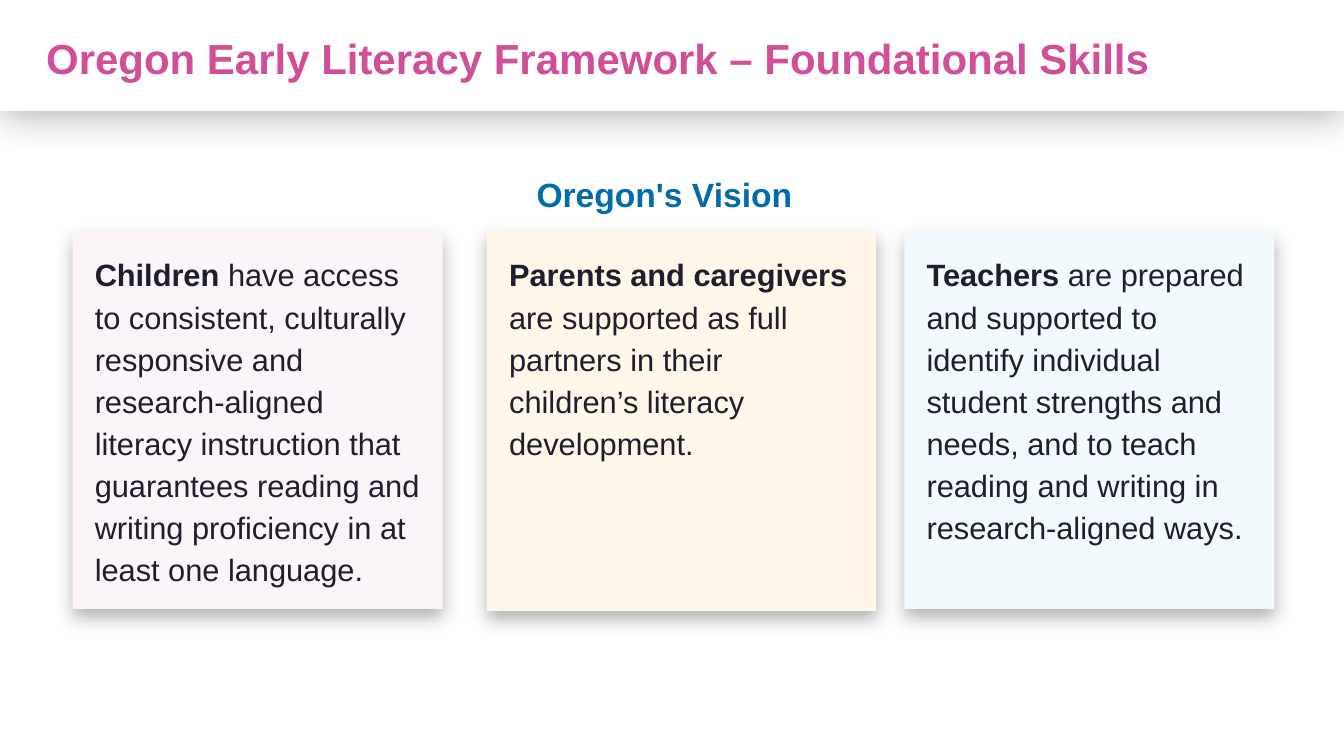
import pptx
import pptx.dml.color
import pptx.enum.shapes
import pptx.enum.text
import pptx.util
from lxml import etree
from pptx.oxml.ns import qn
from pptx.util import Inches, Pt

COLORS = {
    "white": "FFFFFF",
    "title": "D14F97",
    "vision": "026CAA",
    "text": "1E1E2D",
    "shadow": "000000",
    "children": "FBF4F8",
    "parents": "FEF7EA",
    "teachers": "F3FAFE",
}
ALIGN = pptx.enum.text.PP_ALIGN
ANCHOR = pptx.enum.text.MSO_ANCHOR
BODY_FORMAT = {"line_spacing": 1.14, "space_after": Pt(6)}
CARD_TOP = 2.29
CARDS = [
    (0.72, 3.67, 3.75, "children", "Children",
     " have access to consistent, culturally responsive and research-aligned "
     "literacy instruction that guarantees reading and writing proficiency in "
     "at least one language."),
    (4.83, 3.86, 3.77, "parents", "Parents and caregivers ",
     "are supported as full partners in their children’s literacy development."),
    (8.97, 3.67, 3.75, "teachers", "Teachers",
     " are prepared and supported to identify individual student strengths and "
     "needs, and to teach reading and writing in research-aligned ways."),
]


def rgb(name):
    """Return the named colour."""
    return pptx.dml.color.RGBColor.from_string(COLORS[name])


def apply_format(target, values):
    """Set every attribute in values on target."""
    for name, value in values.items():
        setattr(target, name, value)


def add_shadow(shape, blur, distance):
    """Give a shape a soft downward shadow."""
    effects = etree.SubElement(shape._element.spPr, qn("a:effectLst"))
    shadow = etree.SubElement(
        effects, qn("a:outerShdw"), blurRad=str(Pt(blur)), dist=str(Pt(distance)),
        dir="5400000", algn="t", rotWithShape="0")
    color = etree.SubElement(shadow, qn("a:srgbClr"), val=COLORS["shadow"])
    etree.SubElement(color, qn("a:alpha"), val="30000")


def add_panel(slide, place, fill, blur, distance):
    """Add a filled rectangle with a shadow and no outline."""
    panel = slide.shapes.add_shape(
        pptx.enum.shapes.MSO_SHAPE.RECTANGLE, *map(Inches, place))
    panel.fill.solid()
    panel.fill.fore_color.rgb = rgb(fill)
    panel.line.fill.background()
    add_shadow(panel, blur, distance)
    return panel


def write_text(box, spans, size, color, frame_format, para_format):
    """Write one paragraph of (text, bold) spans into a box."""
    frame = box.text_frame
    apply_format(frame, {"word_wrap": True, **frame_format})
    para = frame.paragraphs[0]
    apply_format(para, para_format)
    for text, bold in spans:
        span = para.add_run()
        span.text = text
        apply_format(span.font, {"name": "Arial", "size": Pt(size), "bold": bold})
        span.font.color.rgb = rgb(color)


def padding(left):
    """Return a top-anchored frame format with wide margins."""
    wide = Inches(0.2)
    return {"vertical_anchor": ANCHOR.TOP, "margin_left": Inches(left),
            "margin_right": wide, "margin_top": wide, "margin_bottom": wide}


def add_heading(slide, place, text, size, color, frame_format, para_format):
    """Add a bold one-line text box."""
    box = slide.shapes.add_textbox(*map(Inches, place))
    write_text(box, [(text, True)], size, color, frame_format, para_format)


def add_card(slide, left, width, height, fill, lead, rest):
    """Add a tinted card that opens with a bold lead."""
    card = add_panel(slide, (left, CARD_TOP, width, height), fill, 13, 6)
    write_text(card, [(lead, True), (rest, False)], 22, "text",
               padding(0.22), {"alignment": ALIGN.LEFT, **BODY_FORMAT})


def main():
    """Build the slide and save it."""
    deck = pptx.Presentation()
    deck.slide_width, deck.slide_height = Inches(13.33), Inches(7.5)
    slide = deck.slides.add_slide(deck.slide_layouts[6])
    add_panel(slide, (0, 0, 13.33, 1.1), "white", 28, 3)
    add_heading(slide, (0.36, 0.27, 12.67, 0.61),
                "Oregon Early Literacy Framework – Foundational Skills", 30, "title",
                {"vertical_anchor": ANCHOR.MIDDLE}, {"alignment": ALIGN.LEFT})
    add_heading(slide, (0.36, 1.47, 12.46, 0.83), "Oregon's Vision", 24, "vision",
                padding(0.2), {"alignment": ALIGN.CENTER, **BODY_FORMAT})
    for card in CARDS:
        add_card(slide, *card)
    deck.save("out.pptx")


if __name__ == "__main__":
    main()
